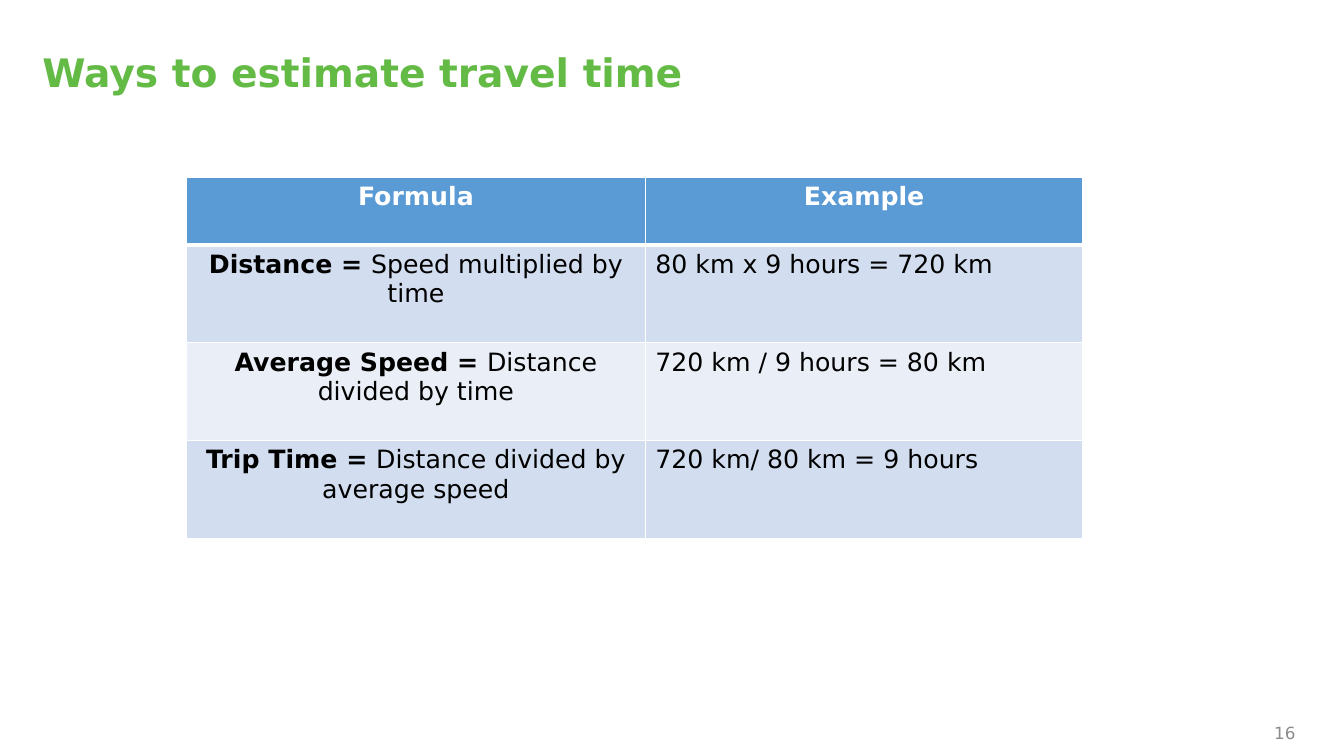
from lxml.etree import SubElement
from pptx import Presentation
from pptx.dml.color import RGBColor
from pptx.enum.text import MSO_ANCHOR as Anchor, PP_ALIGN as Align
from pptx.oxml.ns import qn
from pptx.util import Inches, Pt

FONT = "DejaVu Sans"
COLORS = {
    "title": "63BB46",
    "number": "8C8C8C",
    "header": "5B9BD5",
    "odd_row": "D2DEEF",
    "even_row": "EAEFF7",
    "white": "FFFFFF",
    "black": "000000",
}
COLUMN_WIDTHS = [4.55, 4.34]
HEADER_HEIGHT, ROW_HEIGHT = 0.67, 0.97
HEADINGS = ["Formula", "Example"]
FORMULAS = [
    ("Distance = ", "Speed multiplied by time", "80 km x 9 hours = 720 km"),
    ("Average Speed = ", "Distance divided by time", "720 km / 9 hours = 80 km"),
    ("Trip Time = ", "Distance divided by average speed", "720 km/ 80 km = 9 hours"),
]


def style_paragraph(paragraph, size, color, align=Align.LEFT, bold=None):
    paragraph.alignment = align
    font = paragraph.font
    font.name, font.size, font.bold = FONT, Pt(size), bold
    font.color.rgb = RGBColor.from_string(COLORS[color])


def add_text(slide, text, box, anchor, size, color, **style):
    frame = slide.shapes.add_textbox(*map(Inches, box)).text_frame
    frame.word_wrap = True
    frame.vertical_anchor = anchor
    frame.margin_left = frame.margin_right = 0
    frame.margin_top = frame.margin_bottom = 0
    paragraph = frame.paragraphs[0]
    paragraph.add_run().text = text
    style_paragraph(paragraph, size, color, **style)
    return paragraph


def set_borders(cell, top=1, bottom=1):
    properties = cell._tc.get_or_add_tcPr()
    for side, width in (("L", 1), ("R", 1), ("T", top), ("B", bottom)):
        line = SubElement(properties, qn(f"a:ln{side}"), w=str(Pt(width)))
        fill = SubElement(line, qn("a:solidFill"))
        SubElement(fill, qn("a:srgbClr"), val=COLORS["white"])


def fill_cell(cell, runs, fill, color, align, **borders):
    """Write (text, bold) runs into a bordered, filled cell."""
    set_borders(cell, **borders)
    cell.fill.solid()
    cell.fill.fore_color.rgb = RGBColor.from_string(COLORS[fill])
    paragraph = cell.text_frame.paragraphs[0]
    for text, bold in runs:
        run = paragraph.add_run()
        run.text = text
        run.font.bold = bold
    style_paragraph(paragraph, 18, color, align)


def add_formula_table(slide, left, top):
    height = HEADER_HEIGHT + ROW_HEIGHT * len(FORMULAS)
    table = slide.shapes.add_table(
        len(FORMULAS) + 1, len(HEADINGS), Inches(left), Inches(top),
        Inches(sum(COLUMN_WIDTHS)), Inches(height)).table
    for column, width in zip(table.columns, COLUMN_WIDTHS):
        column.width = Inches(width)

    # Header row
    table.rows[0].height = Inches(HEADER_HEIGHT)
    for index, heading in enumerate(HEADINGS):
        fill_cell(table.cell(0, index), [(heading, True)],
                  "header", "white", Align.CENTER, bottom=3)

    # Formula rows
    for index, (name, formula, example) in enumerate(FORMULAS, start=1):
        table.rows[index].height = Inches(ROW_HEIGHT)
        fill = "odd_row" if index % 2 else "even_row"
        top_width = 3 if index == 1 else 1
        fill_cell(table.cell(index, 0), [(name, True), (formula, False)],
                  fill, "black", Align.CENTER, top=top_width)
        fill_cell(table.cell(index, 1), [(example, False)],
                  fill, "black", Align.LEFT, top=top_width)


def main():
    presentation = Presentation()
    presentation.slide_width = Inches(13.33)
    presentation.slide_height = Inches(7.5)
    slide = presentation.slides.add_slide(presentation.slide_layouts[6])

    # Title and slide number
    title = add_text(slide, "Ways to estimate travel time", (0.42, 0.49, 11.75, 0.51),
                     Anchor.MIDDLE, 28, "title", bold=True)
    title.line_spacing = 0.9
    add_text(slide, "16", (9.85, 6.97, 3, 0.4), Anchor.BOTTOM, 12, "number",
             align=Align.RIGHT)

    # Formulas with examples
    add_formula_table(slide, 1.85, 1.76)

    presentation.save("out.pptx")


if __name__ == "__main__":
    main()
